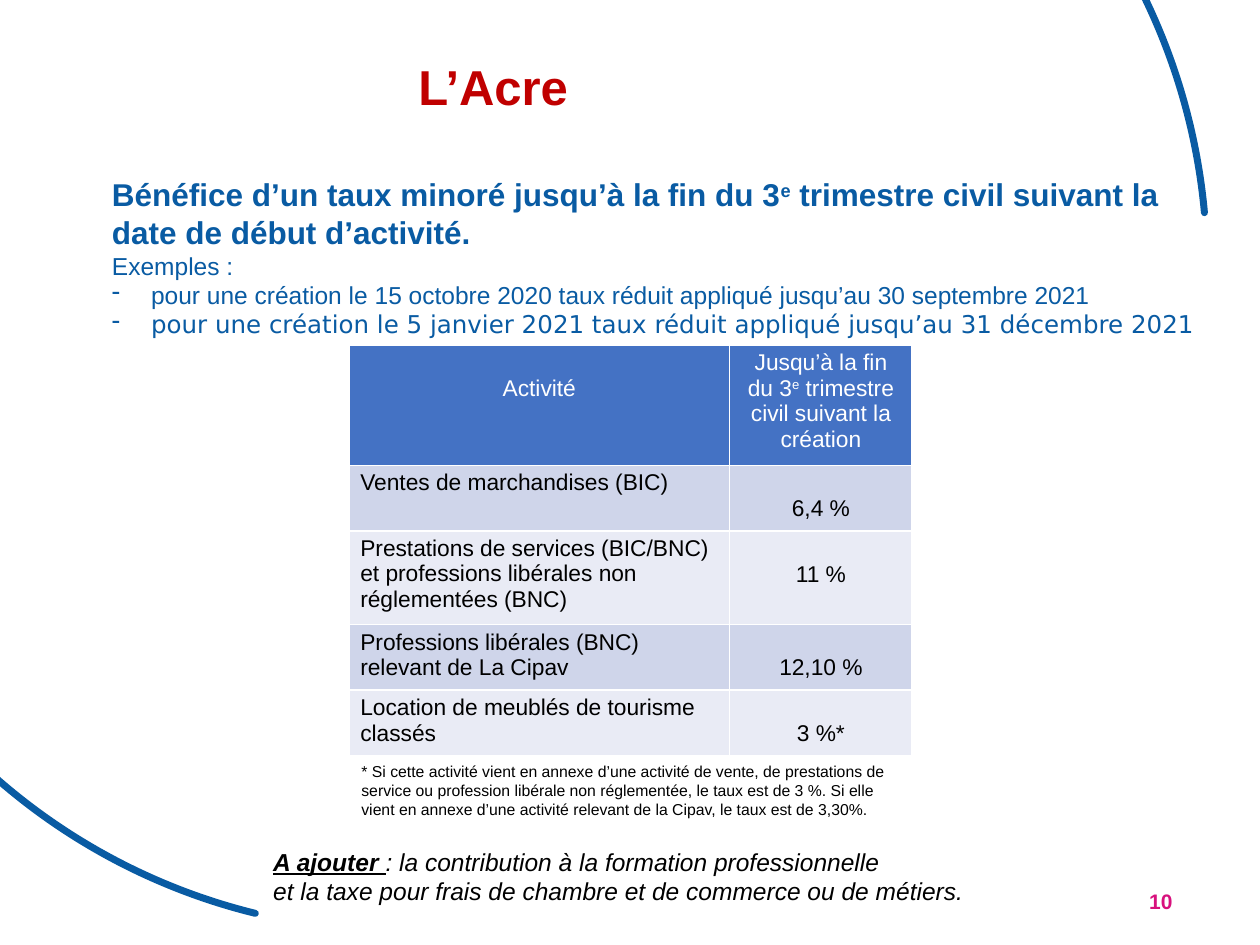
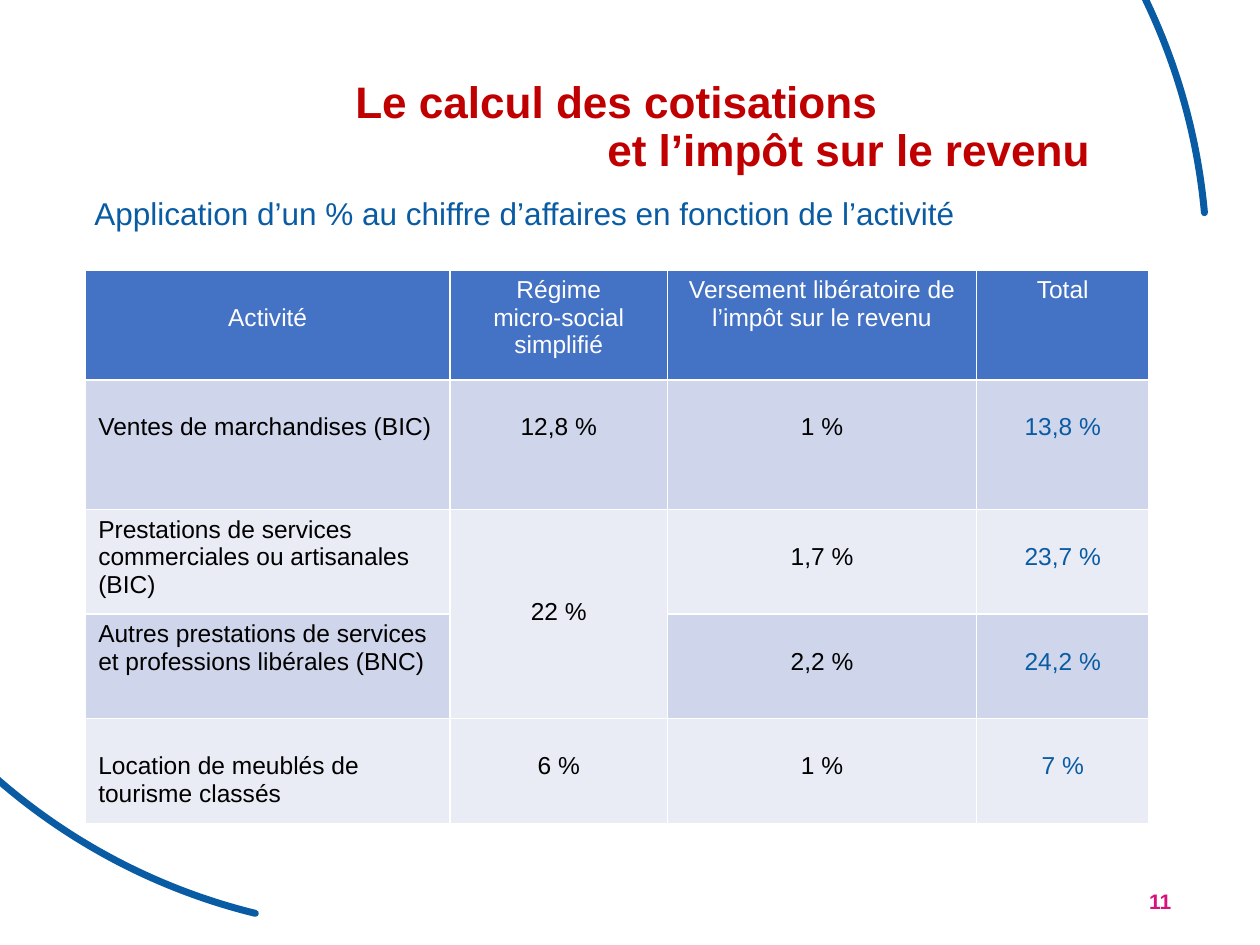
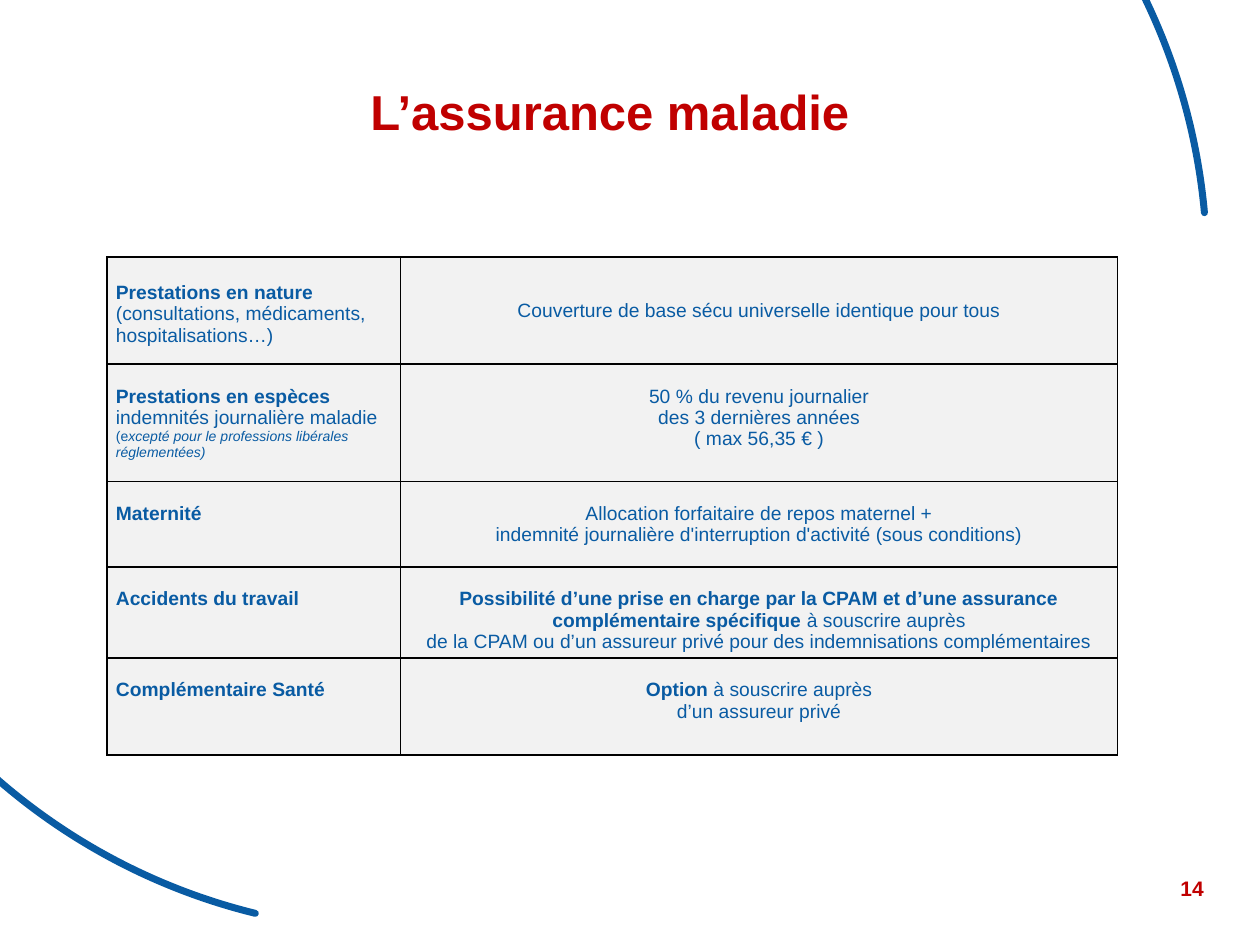
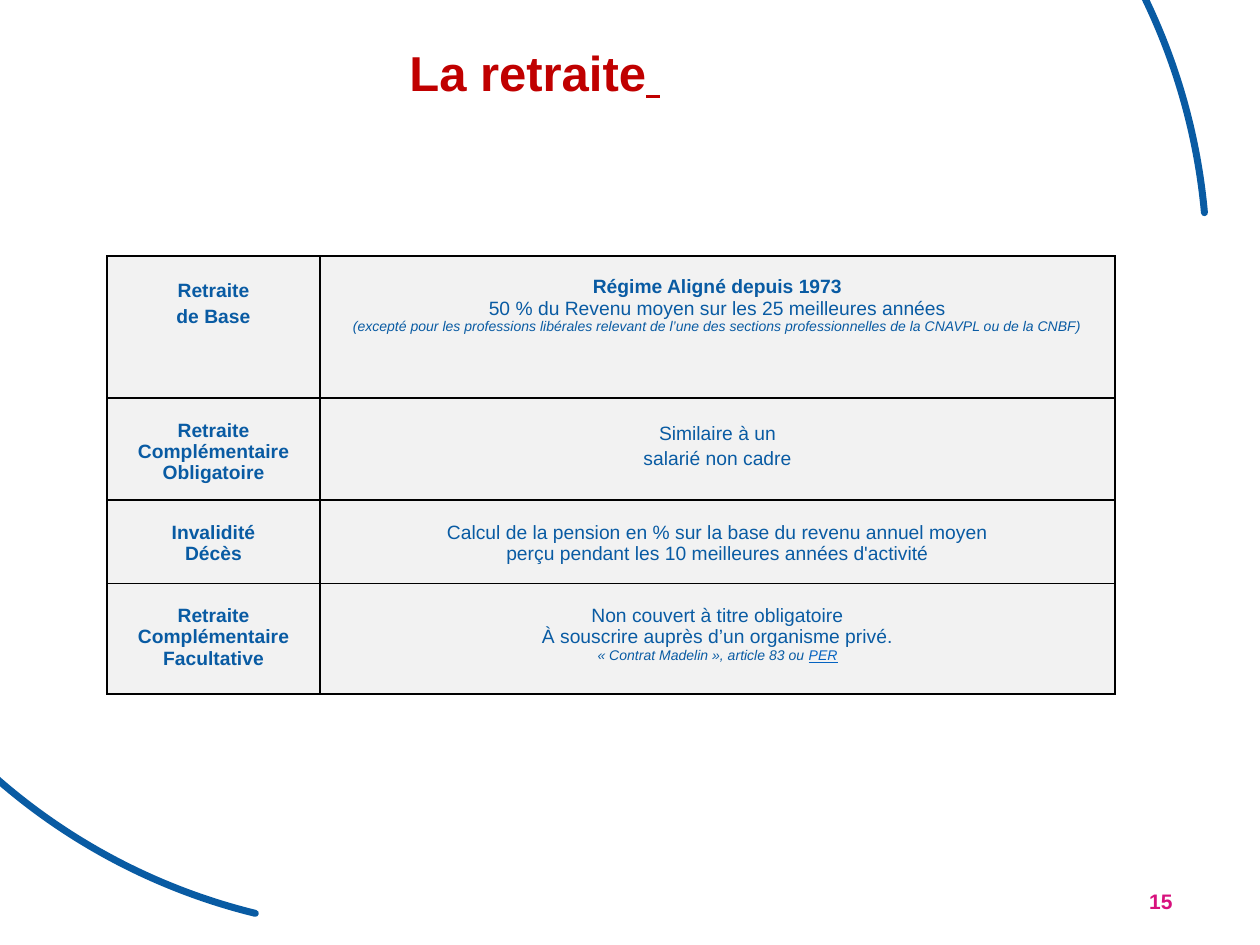
from lxml import etree
from pptx import Presentation
from pptx.dml.color import RGBColor
from pptx.enum.shapes import MSO_SHAPE
from pptx.enum.text import MSO_ANCHOR, PP_ALIGN
from pptx.oxml.ns import qn
from pptx.util import Inches, Pt

ARC = MSO_SHAPE.ARC
LEFT, MID = PP_ALIGN.LEFT, PP_ALIGN.CENTER
TOP, HALF = MSO_ANCHOR.TOP, MSO_ANCHOR.MIDDLE

BLUE = RGBColor(0x09, 0x5B, 0xA3)
RED = RGBColor(0xC0, 0x00, 0x00)
PINK = RGBColor(0xD8, 0x11, 0x7D)
BLACK = RGBColor(0x00, 0x00, 0x00)
WHITE = RGBColor(0xFF, 0xFF, 0xFF)
LINK = RGBColor(0x05, 0x63, 0xC1)
HEAD = RGBColor(0x44, 0x72, 0xC4)
DARK = RGBColor(0xCF, 0xD5, 0xEA)
LIGHT = RGBColor(0xE9, 0xEB, 0xF5)
GREY = RGBColor(0xF2, 0xF2, 0xF2)

WIDE, HIGH = Inches(10), Inches(7.5)
FONT = "Arial"
LINE = 1.12  # line height, in font sizes

BOLD = {"bold": True}
NOTE = {"size": 8, "italic": True}
SUP = {"sup": True}


def area(x, y, w, h):
    """Turn percentages of the slide into lengths."""
    return [int(side * part / 100)
            for side, part in zip((WIDE, HIGH, WIDE, HIGH), (x, y, w, h))]


def fill_text(frame, lines, size=11, color=BLUE, bold=False, italic=False,
              font=FONT, align=LEFT, gap=0, pitch=None, indent=0, hang=0,
              mark=None):
    """Write paragraphs; a line is a string or a list of (text, format) runs."""
    for i, line in enumerate(lines):
        para = frame.paragraphs[0]
        if i or para.runs:
            para = frame.add_paragraph()
        para.alignment = align
        if gap and i:
            para.space_before = Pt(gap)
        if pitch:
            para.line_spacing = pitch
        if indent:
            props = para._p.get_or_add_pPr()
            props.set("marL", str(Inches(indent)))
            props.set("indent", str(-Inches(hang)))
            if mark:
                etree.SubElement(props, qn("a:buChar")).set("char", mark)
        for piece in [(line, {})] if isinstance(line, str) else line:
            words, own = piece
            run = para.add_run()
            run.text = words
            run.font.name = own.get("font", font)
            run.font.size = Pt(own.get("size", size))
            run.font.bold = own.get("bold", bold)
            run.font.italic = own.get("italic", italic)
            run.font.underline = own.get("under", False)
            run.font.color.rgb = own.get("color", color)
            if own.get("sup"):
                run._r.get_or_add_rPr().set("baseline", "30000")


def text(slide, box, *lines, flush=False, anchor=TOP, **form):
    frame = slide.shapes.add_textbox(*area(*box)).text_frame
    frame.word_wrap = True
    frame.vertical_anchor = anchor
    if flush:
        frame.margin_left = frame.margin_right = 0
        frame.margin_top = frame.margin_bottom = 0
    fill_text(frame, lines, **form)
    return frame


def title(slide, x, y, w, *lines, size=28, **form):
    return text(slide, (x, y, w, 8), *lines, flush=True, size=size,
                color=RED, bold=True, pitch=0.9, **form)


def page(slide, number):
    text(slide, (91.2, 92.67, 3.9, 5.33), number, flush=True, anchor=HALF,
         size=12, color=PINK, bold=True)


def arcs(slide):
    for box, turn in (((-2.9, -37.33, 98.7, 131.6), 354.8),
                      ((-17, -32.13, 97.9, 130.67), 193.8)):
        arc = slide.shapes.add_shape(ARC, *area(*box))
        arc.rotation = turn
        arc.shadow.inherit = False
        arc.fill.background()
        arc.line.color.rgb = BLUE
        arc.line.width = Pt(4)
        arc.line._get_or_add_ln().set("cap", "rnd")


def cell(*lines, skip=0, **form):
    """Content of a table cell, pushed down by `skip` lines."""
    return lines, skip, form


def mid(*lines, **form):
    return cell(*lines, align=MID, **form)


def edges(spot, color):
    props = spot._tc.get_or_add_tcPr()
    for side in ("lnL", "lnR", "lnT", "lnB"):
        line = etree.SubElement(props, qn("a:" + side), w=str(Pt(1)))
        paint = etree.SubElement(line, qn("a:solidFill"))
        etree.SubElement(paint, qn("a:srgbClr"), val=str(color))


def grid(slide, box, cols, rows, cells, fills, edge, size, pad):
    """Table in a box; cols and rows are relative weights."""
    left, top, wide, high = area(*box)
    table = slide.shapes.add_table(len(rows), len(cols), left, top,
                                   wide, high).table
    table.first_row = table.horz_banding = False
    for col, part in zip(table.columns, cols):
        col.width = int(wide * part / sum(cols))
    for row, part in zip(table.rows, rows):
        row.height = int(high * part / sum(rows))
    side, rim = pad
    for r, line in enumerate(cells):
        for c, item in enumerate(line):
            spot = table.cell(r, c)
            edges(spot, edge)
            spot.fill.solid()
            spot.fill.fore_color.rgb = fills[r % len(fills)]
            spot.margin_left = spot.margin_right = Inches(side)
            spot.margin_top = spot.margin_bottom = Inches(rim)
            if item:
                lines, skip, form = item
                spot.margin_top = Inches(rim) + Pt(skip * size * LINE)
                fill_text(spot.text_frame, lines, **{"size": size, **form})
    return table


def rates(slide, box, cols, rows, cells, size, pad):
    """Banded table of rates under a blue header."""
    return grid(slide, box, cols, rows, cells,
                [HEAD, DARK, LIGHT, DARK, LIGHT], WHITE, size, pad)


def cover(slide, box, cols, rows, cells):
    """Grey table of insurance cover with black rules."""
    return grid(slide, box, cols, rows, cells, [GREY], BLACK, 11, (0.07, 0))


def acre(slide):
    title(slide, 33.2, 6.67, 60.2, "L’Acre")
    # Reduced rate and examples
    frame = text(
        slide, (7.9, 17.87, 89.1, 26),
        [("Bénéfice d’un taux minoré jusqu’à la fin du 3", {}), ("e", SUP),
         (" trimestre civil suivant la date de début d’activité.", {})],
        size=18, bold=True)
    fill_text(frame, ["Exemples :"], size=14)
    fill_text(frame, [
        "pour une création le 15 octobre 2020 taux réduit appliqué "
        "jusqu’au 30 septembre 2021",
        [("pour une création le 5 janvier 2021 taux réduit appliqué "
          "jusqu’au 31 décembre 2021", {"font": "DejaVu Sans"})]],
        size=14, indent=0.31, hang=0.31, mark="-")
    # Rates
    cells = [[mid("Activité", skip=1, color=WHITE),
              mid([("Jusqu’à la fin du 3", {}), ("e", SUP),
                   (" trimestre civil suivant la création", {})],
                  color=WHITE)]]
    for job, rate in (
            ("Ventes de marchandises (BIC)", "6,4 %"),
            ("Prestations de services (BIC/BNC) et professions libérales "
             "non réglementées (BNC)", "11 %"),
            ("Professions libérales (BNC) relevant de La Cipav", "12,10 %"),
            ("Location de meublés de tourisme classés", "3 %*")):
        cells.append([cell(job, color=BLACK),
                      mid(rate, skip=1, color=BLACK)])
    rates(slide, (27.7, 36.53, 44.7, 43.47), (3.02, 1.45),
          (0.95, 0.52, 0.74, 0.52, 0.52), cells, 13, (0.09, 0.04))
    # Notes
    text(slide, (27.7, 80, 44.7, 7.47),
         "* Si cette activité vient en annexe d’une activité de vente, de "
         "prestations de service ou profession libérale non réglementée, le "
         "taux est de 3 %. Si elle vient en annexe d’une activité relevant "
         "de la Cipav, le taux est de 3,30%.", size=9, color=BLACK)
    text(slide, (20.7, 88.93, 79.3, 7.6),
         [("A ajouter ", {"bold": True, "under": True}),
          (": la contribution à la formation professionnelle", {})],
         "et la taxe pour frais de chambre et de commerce ou de métiers.",
         size=14, color=BLACK, italic=True)
    page(slide, "10")


def tax(slide):
    frame = title(slide, 28.2, 8.53, 63, "Le calcul des cotisations",
                  size=25.2)
    fill_text(frame, ["et l’impôt sur le revenu"], size=25.2, color=RED,
              bold=True, pitch=0.9, indent=2)
    text(slide, (2.6, 19.87, 89.9, 5.33),
         "Application d’un % au chiffre d’affaires en fonction de l’activité",
         size=18, indent=0.39)
    # Rates by activity
    cells = [[mid("Activité", skip=1, color=WHITE),
              mid("Régime", "micro-social simplifié", color=WHITE),
              mid("Versement libératoire de l’impôt sur le revenu",
                  color=WHITE),
              mid("Total", color=WHITE)]]
    for job, drop, base, skip, levy, total in (
            ("Ventes de marchandises (BIC)", 1, "12,8 %", 1,
             "1 %", "13,8 %"),
            ("Prestations de services commerciales ou artisanales (BIC)", 0,
             "22 %", 3, "1,7 %", "23,7 %"),
            ("Autres prestations de services et professions libérales (BNC)",
             0, None, 0, "2,2 %", "24,2 %"),
            ("Location de meublés de tourisme classés", 1, "6 %", 1,
             "1 %", "7 %")):
        cells.append([cell(job, skip=drop, color=BLACK),
                      base and mid(base, skip=skip, color=BLACK),
                      mid(levy, skip=1, color=BLACK),
                      mid(total, skip=1)])
    table = rates(slide, (6.8, 28.6, 84.4, 58.53), (2.89, 1.73, 2.45, 1.37),
                  (0.87, 1.03, 0.83, 0.83, 0.83), cells, 14, (0.1, 0.05))
    table.cell(2, 1).merge(table.cell(3, 1))
    page(slide, "11")


def health(slide):
    title(slide, 29.4, 9.33, 61.1, "L’assurance maladie")
    cells = [
        [cell([("Prestations en nature ", BOLD),
               ("(consultations, médicaments, hospitalisations…)", {})],
              skip=1.15),
         mid("Couverture de base sécu universelle identique pour tous",
             skip=2)],
        [cell([("Prestations en espèces ", BOLD),
               ("indemnités journalière maladie ", {}), ("(e", {"size": 8}),
               ("xcepté pour le professions libérales réglementées)", NOTE)],
              skip=1),
         mid("50 % du revenu journalier", "des 3 dernières années",
             "( max 56,35 € )", skip=1)],
        [cell("Maternité", skip=1, bold=True),
         mid("Allocation forfaitaire de repos maternel +",
             "indemnité journalière d'interruption d'activité "
             "(sous conditions)", skip=1)],
        [cell("Accidents du travail", skip=1, bold=True),
         mid([("Possibilité d’une prise en charge par la CPAM et d’une "
               "assurance complémentaire spécifique ", BOLD),
              ("à souscrire auprès", {})],
             "de la CPAM ou d’un assureur privé pour des indemnisations "
             "complémentaires", skip=1)],
        [cell("Complémentaire Santé", skip=1, bold=True),
         mid([("Option ", BOLD), ("à souscrire auprès", {})],
             "d’un assureur privé", skip=1)]]
    cover(slide, (8.5, 27.2, 80.2, 52.13), (2.33, 5.69),
          (0.85, 0.93, 0.68, 0.68, 0.77), cells)
    text(slide, (92.7, 92, 4.1, 4.8), "14", size=12, color=RED, bold=True)


def pension(slide):
    title(slide, 32.5, 5.2, 60.7,
          [("La retraite", {}), (" ", {"bold": False, "under": True})])
    cells = [
        [mid("Retraite", "de Base", skip=1.15, gap=2.2, bold=True),
         mid([("Régime Aligné depuis 1973", BOLD)],
             "50 % du Revenu moyen sur les 25 meilleures années",
             [("(excepté pour les professions libérales relevant de l’une "
               "des sections professionnelles de la CNAVPL ou de la CNBF)",
               NOTE)], skip=0.95)],
        [mid("Retraite Complémentaire Obligatoire", skip=1, bold=True),
         mid("Similaire à un", "salarié non cadre", skip=1.15, gap=2.2)],
        [mid("Invalidité", "Décès", skip=1, bold=True),
         mid("Calcul de la pension en % sur la base du revenu annuel moyen",
             "perçu pendant les 10 meilleures années d'activité", skip=1)],
        [mid("Retraite Complémentaire Facultative", skip=1, bold=True),
         mid("Non couvert à titre obligatoire",
             "À souscrire auprès d’un organisme privé.",
             [("« Contrat Madelin », article 83 ou ", NOTE),
              ("PER", {**NOTE, "color": LINK, "under": True})], skip=1)]]
    cover(slide, (8.5, 27.07, 80, 46.4), (1.69, 6.31),
          (1.13, 0.81, 0.66, 0.88), cells)
    page(slide, "15")


def main():
    deck = Presentation()
    deck.slide_width, deck.slide_height = WIDE, HIGH
    for build in (acre, tax, health, pension):
        slide = deck.slides.add_slide(deck.slide_layouts[6])
        arcs(slide)
        build(slide)
    deck.save("out.pptx")


if __name__ == "__main__":
    main()
